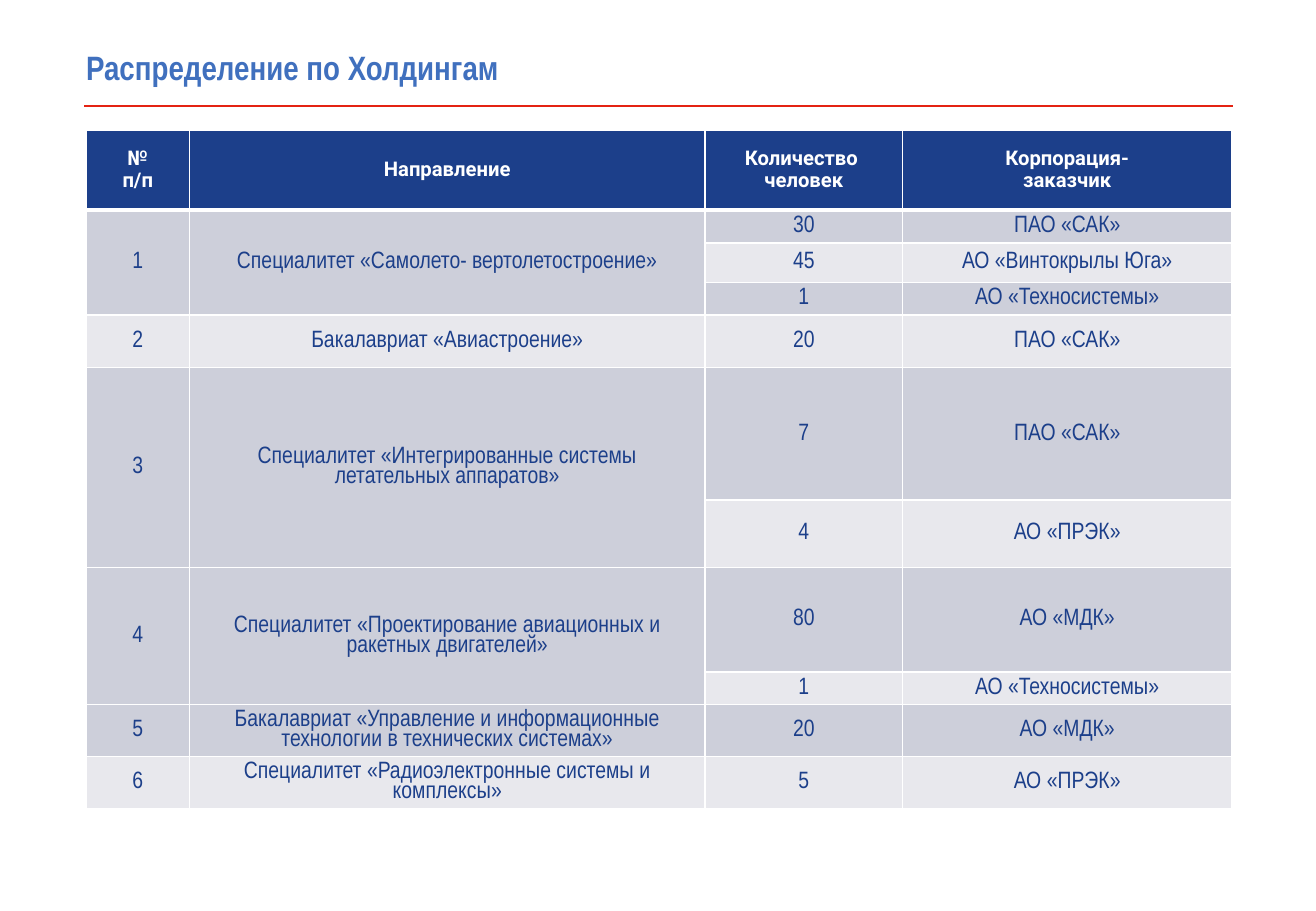
from lxml import etree
from pptx import Presentation
from pptx.dml.color import RGBColor
from pptx.enum.shapes import MSO_CONNECTOR
from pptx.enum.text import MSO_ANCHOR, PP_ALIGN
from pptx.oxml.ns import qn
from pptx.util import Cm, Pt

LEFT, MID = PP_ALIGN.LEFT, PP_ALIGN.CENTER
STRAIGHT = MSO_CONNECTOR.STRAIGHT
TOP, CENTRE = MSO_ANCHOR.TOP, MSO_ANCHOR.MIDDLE

TITLE = "Распределение по Холдингам"
HEADS = ["№\nп/п", "Направление", "Количество \nчеловек", "Корпорация-\nзаказчик"]
GROUPS = [
    ("Специалитет «Самолето- вертолетостроение»", [
        ("30", "ПАО «САК»", 0.69),
        ("45", "АО «Винтокрылы Юга»", 0.83),
        ("1", "АО «Техносистемы»", 0.68)]),
    ("Бакалавриат «Авиастроение»", [("20", "ПАО «САК»", 1.1)]),
    ("Специалитет «Интегрированные системы летательных аппаратов»", [
        ("7", "ПАО «САК»", 2.77),
        ("4", "АО «ПРЭК»", 1.41)]),
    ("Специалитет «Проектирование авиационных и ракетных двигателей»", [
        ("80", "АО «МДК»", 2.18),
        ("1", "АО «Техносистемы»", 0.68)]),
    ("Бакалавриат «Управление и информационные технологии в технических системах»", [
        ("20", "АО «МДК»", 1.09)]),
    ("Специалитет «Радиоэлектронные системы и комплексы»", [
        ("5", "АО «ПРЭК»", 1.09)]),
]
COLS = [2.16, 10.78, 4.13, 6.88]
HEAD_H = 1.67
COLORS = {"navy": "1C3F8A", "blue": "4070BE", "red": "E42313",
          "dark": "CDCFDA", "light": "E8E8ED", "white": "FFFFFF"}


def tint(name):
    return RGBColor.from_string(COLORS[name])


def write(frame, text, size=14, font="Arial Narrow", color="navy",
          bold=False, align=MID, space=0.9):
    frame.word_wrap = True
    for i, line in enumerate(text.split("\n")):
        para = frame.paragraphs[0] if i == 0 else frame.add_paragraph()
        para.alignment = align
        para.line_spacing = space
        run = para.add_run()
        run.text = line
        run.font.size = Pt(size)
        run.font.name = font
        run.font.bold = bold
        run.font.color.rgb = tint(color)


def edge(cell, row):
    props = cell._tc.get_or_add_tcPr()
    widths = {"L": 1, "R": 1, "T": 3 if row == 1 else 1, "B": 3 if row == 0 else 1}
    for i, (side, width) in enumerate(widths.items()):
        line = etree.Element(qn("a:ln" + side), w=str(Pt(width)))
        fill = etree.SubElement(line, qn("a:solidFill"))
        etree.SubElement(fill, qn("a:srgbClr"), val=COLORS["white"])
        props.insert(i, line)


def main():
    deck = Presentation()
    deck.slide_width, deck.slide_height = Cm(27.51), Cm(19.05)
    slide = deck.slides.add_slide(deck.slide_layouts[6])

    rule = slide.shapes.add_connector(STRAIGHT, Cm(1.76), Cm(2.21), Cm(25.78), Cm(2.21))
    rule.line.color.rgb = tint("red")
    rule.line.width = Pt(1)
    etree.SubElement(rule._element.spPr, qn("a:effectLst"))

    frame = slide.shapes.add_textbox(Cm(1.8), Cm(1.05), Cm(18.16), Cm(0.69)).text_frame
    frame.margin_left = frame.margin_right = frame.margin_top = frame.margin_bottom = 0
    frame.vertical_anchor = TOP
    write(frame, TITLE, size=20, color="blue", bold=True, align=LEFT, space=0.93)

    highs = [HEAD_H] + [high for _, orders in GROUPS for _, _, high in orders]
    table = slide.shapes.add_table(len(highs), len(COLS), Cm(1.8), Cm(2.72),
                                   Cm(sum(COLS)), Cm(sum(highs))).table
    table.first_row = table.horz_banding = False
    for col, wide in zip(table.columns, COLS):
        col.width = Cm(wide)
    for r, high in enumerate(highs):
        table.rows[r].height = Cm(high)
        shade = "navy" if r == 0 else "dark" if r % 2 else "light"
        for c in range(len(COLS)):
            cell = table.cell(r, c)
            cell.vertical_anchor = CENTRE
            cell.margin_top = cell.margin_bottom = 0
            cell.fill.solid()
            cell.fill.fore_color.rgb = tint(shade)
            edge(cell, r)

    for c, head in enumerate(HEADS):
        write(table.cell(0, c).text_frame, head, size=12, font="Roboto",
              color="white", bold=True)
    row = 1
    for num, (course, orders) in enumerate(GROUPS, 1):
        last = row + len(orders) - 1
        for c, text in enumerate((str(num), course)):
            if last > row:
                table.cell(row, c).merge(table.cell(last, c))
            write(table.cell(row, c).text_frame, text)
        for count, firm, _ in orders:
            write(table.cell(row, 2).text_frame, count)
            write(table.cell(row, 3).text_frame, firm)
            row += 1

    deck.save("out.pptx")


if __name__ == "__main__":
    main()
